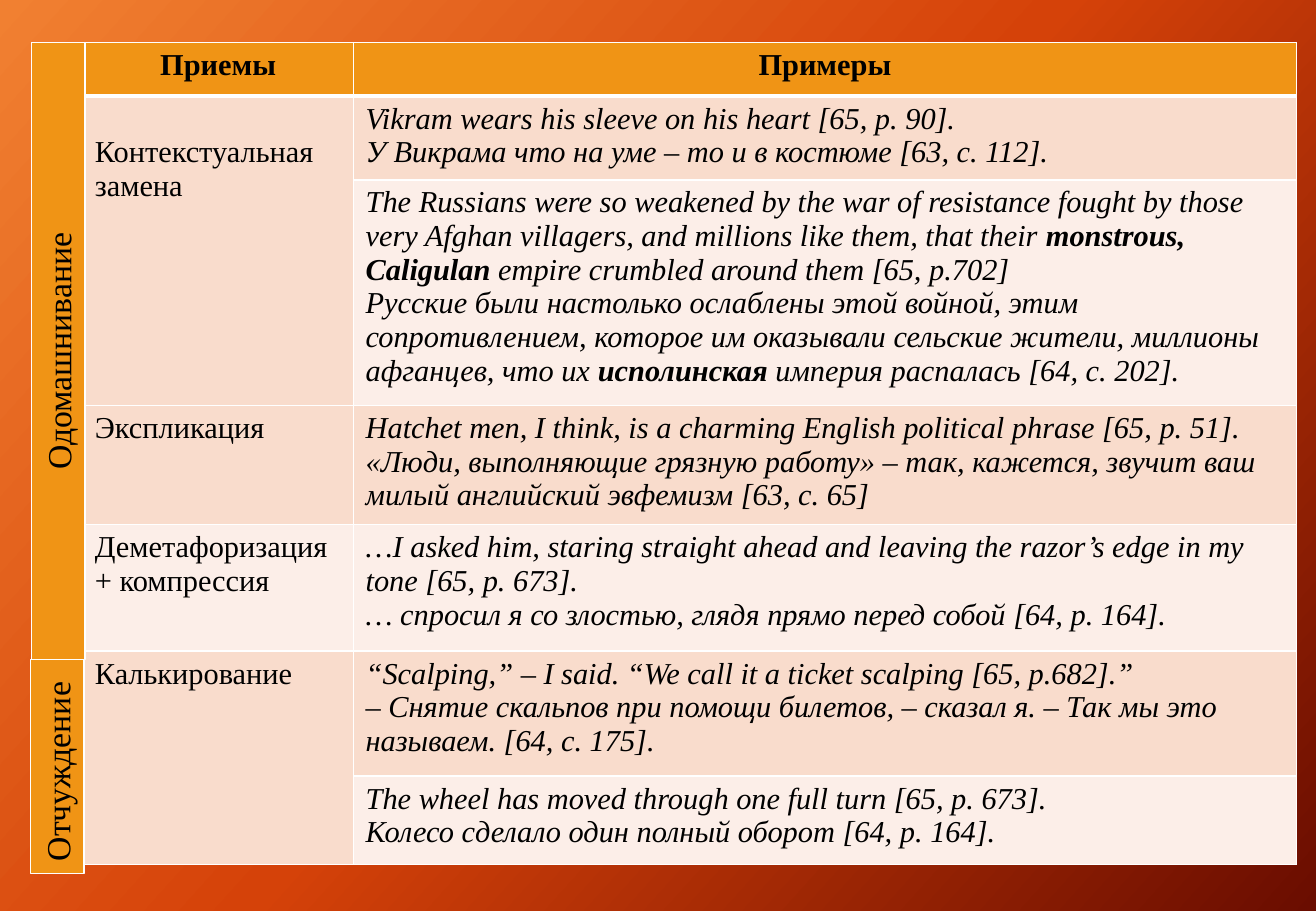
from copy import deepcopy

from lxml.etree import SubElement
from pptx import Presentation
from pptx.dml.color import RGBColor
from pptx.enum.shapes import MSO_SHAPE as Shape
from pptx.enum.text import MSO_ANCHOR as Anchor, PP_ALIGN as Align
from pptx.oxml.ns import qn
from pptx.util import Cm, Pt

ORANGE = RGBColor(0xF0, 0x94, 0x15)
PEACH = RGBColor(0xF9, 0xDC, 0xCC)
PALE_PEACH = RGBColor(0xFC, 0xEE, 0xE8)
WHITE = RGBColor(0xFF, 0xFF, 0xFF)
BLACK = RGBColor(0, 0, 0)
GRADIENT = [
    (0, RGBColor(0xF1, 0x80, 0x31)),
    (0.5, RGBColor(0xD5, 0x42, 0x09)),
    (1, RGBColor(0x6A, 0x0D, 0x00)),
]
FONT = "Times New Roman"
BOLD_MARK = "**"

HEADERS = ["Приемы", "Примеры"]
ROWS = [
    ("Контекстуальная замена", [
        "Vikram wears his sleeve on his heart [65, p. 90].",
        "У Викрама что на уме – то и в костюме [63, c. 112].",
    ]),
    (None, [
        "The Russians were so weakened by the war of resistance fought by those very "
        "Afghan villagers, and millions like them, that their** monstrous, Caligulan** "
        "empire crumbled around them [65, p.702]",
        "Русские были настолько ослаблены этой войной, этим сопротивлением, которое им "
        "оказывали сельские жители, миллионы афганцев, что их **исполинская** империя "
        "распалась [64, с. 202].",
    ]),
    ("Экспликация", [
        "Hatchet men, I think, is a charming English political phrase [65, p. 51].",
        "«Люди, выполняющие грязную работу» – так, кажется, звучит ваш милый английский "
        "эвфемизм [63, с. 65]",
    ]),
    ("Деметафоризация\v+ компрессия", [
        "…I asked him, staring straight ahead and leaving the razor’s edge in my tone "
        "[65, p. 673].",
        "… спросил я со злостью, глядя прямо перед собой [64, p. 164].",
    ]),
    ("Калькирование", [
        "“Scalping,” – I said. “We call it a ticket scalping [65, p.682].”",
        "– Снятие скальпов при помощи билетов, – сказал я. – Так мы это называем. "
        "[64, с. 175].",
    ]),
    (None, [
        "The wheel has moved through one full turn [65, p. 673].",
        "Колесо сделало один полный оборот [64, p. 164].",
    ]),
]
COLUMN_WIDTHS = [5.66, 19.71]
ROW_HEIGHTS = [1.12, 1.75, 4.72, 2.49, 2.64, 2.62, 1.85]


def format_run(run, size, bold=False, italic=False):
    run.font.name = FONT
    run.font.size = Pt(size)
    run.font.bold = bold
    run.font.italic = italic
    run.font.color.rgb = BLACK


def write_cell(cell, lines, bold=False, italic=False, align=Align.LEFT):
    cell.text_frame.text = "\n".join(line.replace(BOLD_MARK, "") for line in lines)
    for paragraph, line in zip(cell.text_frame.paragraphs, lines):
        paragraph.alignment = align
        if BOLD_MARK in line:
            paragraph.clear()
            for index, part in enumerate(line.split(BOLD_MARK)):
                run = paragraph.add_run()
                run.text = part
                format_run(run, 18, index % 2 == 1, italic)
        else:
            for run in paragraph.runs:
                format_run(run, 18, bold, italic)


def style_cell(cell, color, top=1, bottom=1):
    properties = cell._tc.get_or_add_tcPr()
    for side, width in (("L", 1), ("R", 1), ("T", top), ("B", bottom)):
        line = SubElement(properties, qn(f"a:ln{side}"), w=str(Pt(width)))
        fill = SubElement(line, qn("a:solidFill"))
        SubElement(fill, qn("a:srgbClr"), val=str(WHITE))
    cell.fill.solid()
    cell.fill.fore_color.rgb = color


def paint_background(slide):
    fill = slide.background.fill
    fill.gradient()
    fill.gradient_angle = 360 - 42
    stop_list = next(slide.element.iter(qn("a:gsLst")))
    stop_list.insert(1, deepcopy(stop_list[0]))
    for stop, (position, color) in zip(fill.gradient_stops, GRADIENT):
        stop.position = position
        stop.color.rgb = color


def add_examples_table(slide, left, top):
    table = slide.shapes.add_table(
        len(ROW_HEIGHTS), len(COLUMN_WIDTHS), left, top,
        Cm(sum(COLUMN_WIDTHS)), Cm(sum(ROW_HEIGHTS))).table
    for column, width in zip(table.columns, COLUMN_WIDTHS):
        column.width = Cm(width)
    for row, height in zip(table.rows, ROW_HEIGHTS):
        row.height = Cm(height)

    for column, header in enumerate(HEADERS):
        cell = table.cell(0, column)
        write_cell(cell, [header], bold=True, align=Align.CENTER)
        style_cell(cell, ORANGE, bottom=3)

    for row, (technique, examples) in enumerate(ROWS, start=1):
        technique_cell, example_cell = table.cell(row, 0), table.cell(row, 1)
        for cell in (technique_cell, example_cell):
            style_cell(cell, PEACH if row % 2 else PALE_PEACH, top=3 if row == 1 else 1)
        write_cell(example_cell, examples, italic=True)
        if technique:
            write_cell(technique_cell, [technique])
        else:
            table.cell(row - 1, 0).merge(technique_cell)
    table.cell(1, 0).margin_top = Cm(0.83)


def add_side_label(slide, text, left, top, width, height, align):
    shift = (height - width) // 2
    label = slide.shapes.add_shape(
        Shape.RECTANGLE, left - shift, top + shift, height, width)
    label.rotation = 270
    label.shadow.inherit = False
    label.fill.solid()
    label.fill.fore_color.rgb = ORANGE
    label.line.color.rgb = WHITE
    label.line.width = Pt(0.75)
    text_frame = label.text_frame
    text_frame.word_wrap = True
    text_frame.vertical_anchor = Anchor.TOP
    text_frame.text = text
    paragraph = text_frame.paragraphs[0]
    paragraph.alignment = align
    format_run(paragraph.runs[0], 20)


def main():
    presentation = Presentation()
    presentation.slide_width = Cm(27.51)
    presentation.slide_height = Cm(19.05)
    slide = presentation.slides.add_slide(presentation.slide_layouts[6])
    paint_background(slide)
    add_examples_table(slide, Cm(1.73), Cm(0.89))
    add_side_label(slide, "Одомашнивание", Cm(0.66), Cm(0.89), Cm(1.12), Cm(12.9),
                   Align.CENTER)
    add_side_label(slide, "Отчуждение", Cm(0.64), Cm(13.79), Cm(1.12), Cm(4.47),
                   Align.LEFT)
    presentation.save("out.pptx")


if __name__ == "__main__":
    main()
